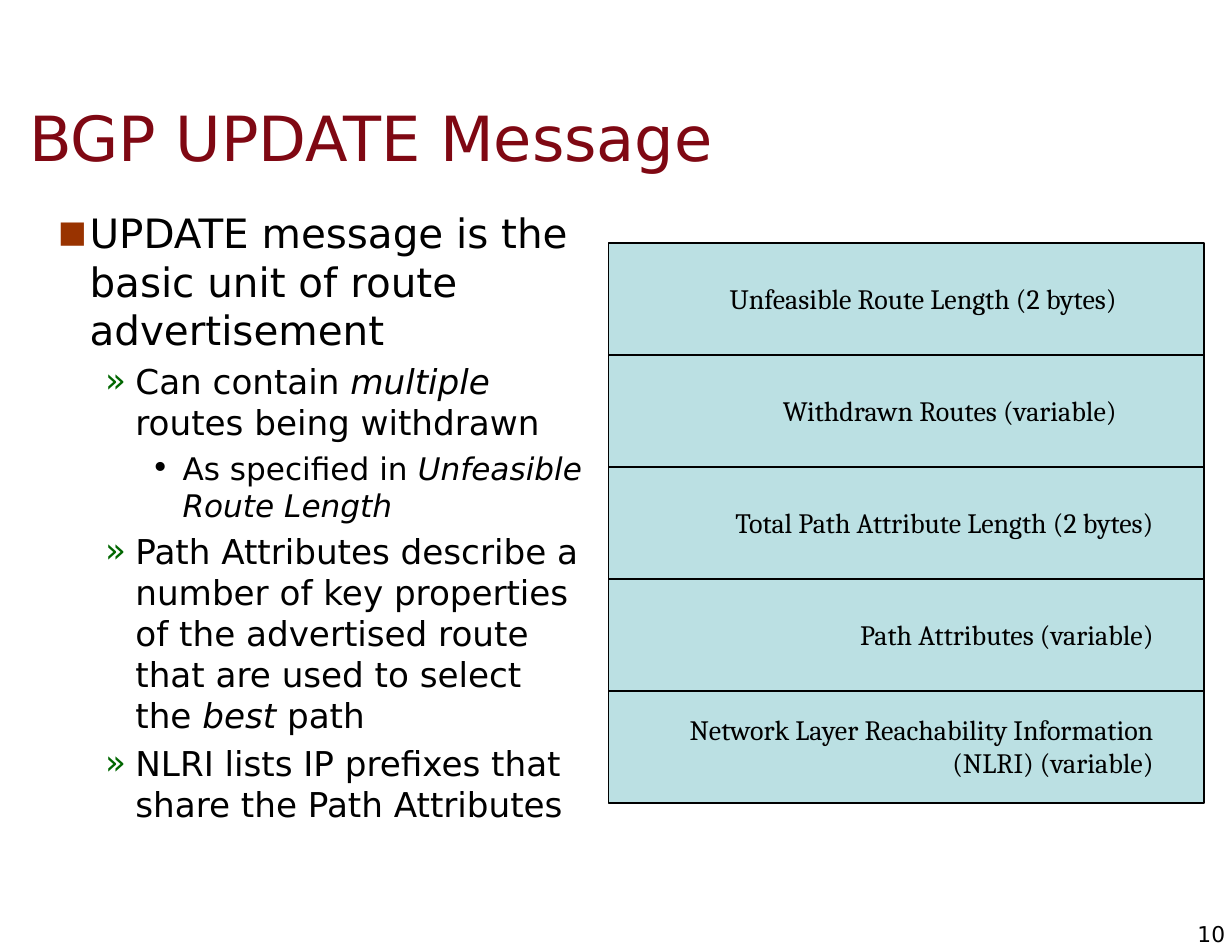
from lxml.etree import SubElement
from pptx import Presentation
from pptx.dml.color import RGBColor
from pptx.enum.shapes import MSO_CONNECTOR, MSO_SHAPE
from pptx.enum.text import MSO_ANCHOR, PP_ALIGN
from pptx.oxml.ns import qn
from pptx.util import Inches, Pt

TITLE = "BGP UPDATE Message"
PAGE = "10"
BODY = [
    (0, "UPDATE message is the basic unit of route advertisement"),
    (1, "Can contain *multiple* routes being withdrawn"),
    (2, "As specified in *Unfeasible Route Length*"),
    (1, "Path Attributes describe a number of key properties of the advertised "
        "route that are used to select the *best* path"),
    (1, "NLRI lists IP prefixes that share the Path Attributes"),
]
FIELDS = [
    ("Unfeasible Route Length (2 bytes)", 4.54, 1),
    ("Withdrawn Routes (variable)", 4.54, 1),
    ("Total Path Attribute Length (2 bytes)", 4.87, 1),
    ("Path Attributes (variable)", 4.87, 1),
    ("Network Layer Reachability Information (NLRI) (variable)", 4.87, 2),
]
THEME = {
    "sans": "DejaVu Sans", "serif": "Cambria",
    "title": "7F0813", "text": "000000", "fill": "BBE0E3", "line": "000000",
    "title_size": 40, "field_size": 18, "page_size": 14, "line_width": 0.75,
}
LEVELS = [
    {"size": 26, "left": 0.42, "hang": 0.28, "char": "■", "color": "993300", "scale": 75},
    {"size": 22, "left": 0.83, "hang": 0.27, "char": "»", "color": "006600", "scale": 100},
    {"size": 20, "left": 1.25, "hang": 0.28, "char": "•", "color": "000000", "scale": 100},
]
W, H = 11, 8.5
LEFT, TOP, WIDTH, ROW = 5.43, 2.17, 5.32, 1.0
INSET_X, INSET_Y, LINE_H = 0.11, 0.06, 0.32


def add_box(shapes, x, y, w, h, **formats):
    sp = shapes.add_textbox(Inches(x), Inches(y), Inches(w), Inches(h))
    tf = sp.text_frame
    values = {
        "word_wrap": True, "vertical_anchor": MSO_ANCHOR.MIDDLE,
        "margin_left": Inches(INSET_X), "margin_right": Inches(INSET_X),
        "margin_top": Inches(INSET_Y), "margin_bottom": Inches(INSET_Y),
    }
    for name, value in {**values, **formats}.items():
        setattr(tf, name, value)
    return tf


def add_text(p, text, size, font="sans", color="text", align=PP_ALIGN.LEFT):
    p.alignment = align
    for i, part in enumerate(text.split("*")):
        if part:
            r = p.add_run()
            r.text = part
            values = {"name": THEME[font], "size": Pt(size), "italic": i % 2 == 1}
            for name, value in values.items():
                setattr(r.font, name, value)
            r.font.color.rgb = RGBColor.from_string(THEME[color])


def add_bullet(p, level):
    pPr = p._p.get_or_add_pPr()
    pPr.set("marL", str(Inches(level["left"])))
    pPr.set("indent", str(-Inches(level["hang"])))
    clr = SubElement(pPr, qn("a:buClr"))
    SubElement(clr, qn("a:srgbClr"), val=level["color"])
    SubElement(pPr, qn("a:buSzPct"), val=str(level["scale"] * 1000))
    SubElement(pPr, qn("a:buFont"), typeface=THEME["sans"])
    SubElement(pPr, qn("a:buChar"), char=level["char"])


def style_line(line):
    line.color.rgb = RGBColor.from_string(THEME["line"])
    line.width = Pt(THEME["line_width"])


def add_body(shapes):
    tf = add_box(shapes, 0.27, 1.8, 5.04, 6.04, vertical_anchor=MSO_ANCHOR.TOP)
    for i, (depth, text) in enumerate(BODY):
        level = LEVELS[depth]
        p = tf.add_paragraph() if i else tf.paragraphs[0]
        p.level = depth
        add_bullet(p, level)
        if i:
            p.space_before = Pt(0.2 * level["size"])
        add_text(p, text, level["size"])


def add_message(shapes):
    frame = shapes.add_shape(MSO_SHAPE.RECTANGLE, Inches(LEFT), Inches(TOP),
                             Inches(WIDTH), Inches(ROW * len(FIELDS)))
    frame.shadow.inherit = False
    frame.fill.solid()
    frame.fill.fore_color.rgb = RGBColor.from_string(THEME["fill"])
    style_line(frame.line)
    for i, (text, width, lines) in enumerate(FIELDS):
        y = TOP + i * ROW
        if i:
            rule = shapes.add_connector(MSO_CONNECTOR.STRAIGHT, Inches(LEFT), Inches(y),
                                        Inches(LEFT + WIDTH), Inches(y))
            style_line(rule.line)
            SubElement(rule._element.spPr, qn("a:effectLst"))
        h = lines * LINE_H + 2 * INSET_Y
        tf = add_box(shapes, LEFT + INSET_X, y + (ROW - h) / 2 - 0.01, width, h)
        add_text(tf.paragraphs[0], text, THEME["field_size"], "serif", align=PP_ALIGN.RIGHT)


def main():
    prs = Presentation()
    prs.slide_width, prs.slide_height = Inches(W), Inches(H)
    s = prs.slides.add_slide(prs.slide_layouts[6])
    tf = add_box(s.shapes, 0.15, 0.7, 10.53, 1.04)
    add_text(tf.paragraphs[0], TITLE, THEME["title_size"], color="title")
    add_body(s.shapes)
    add_message(s.shapes.add_group_shape().shapes)
    tf = add_box(s.shapes, 10.51, 8.17, 0.54, 0.34, word_wrap=False)
    add_text(tf.paragraphs[0], PAGE, THEME["page_size"], align=PP_ALIGN.RIGHT)
    prs.save("out.pptx")


if __name__ == "__main__":
    main()
